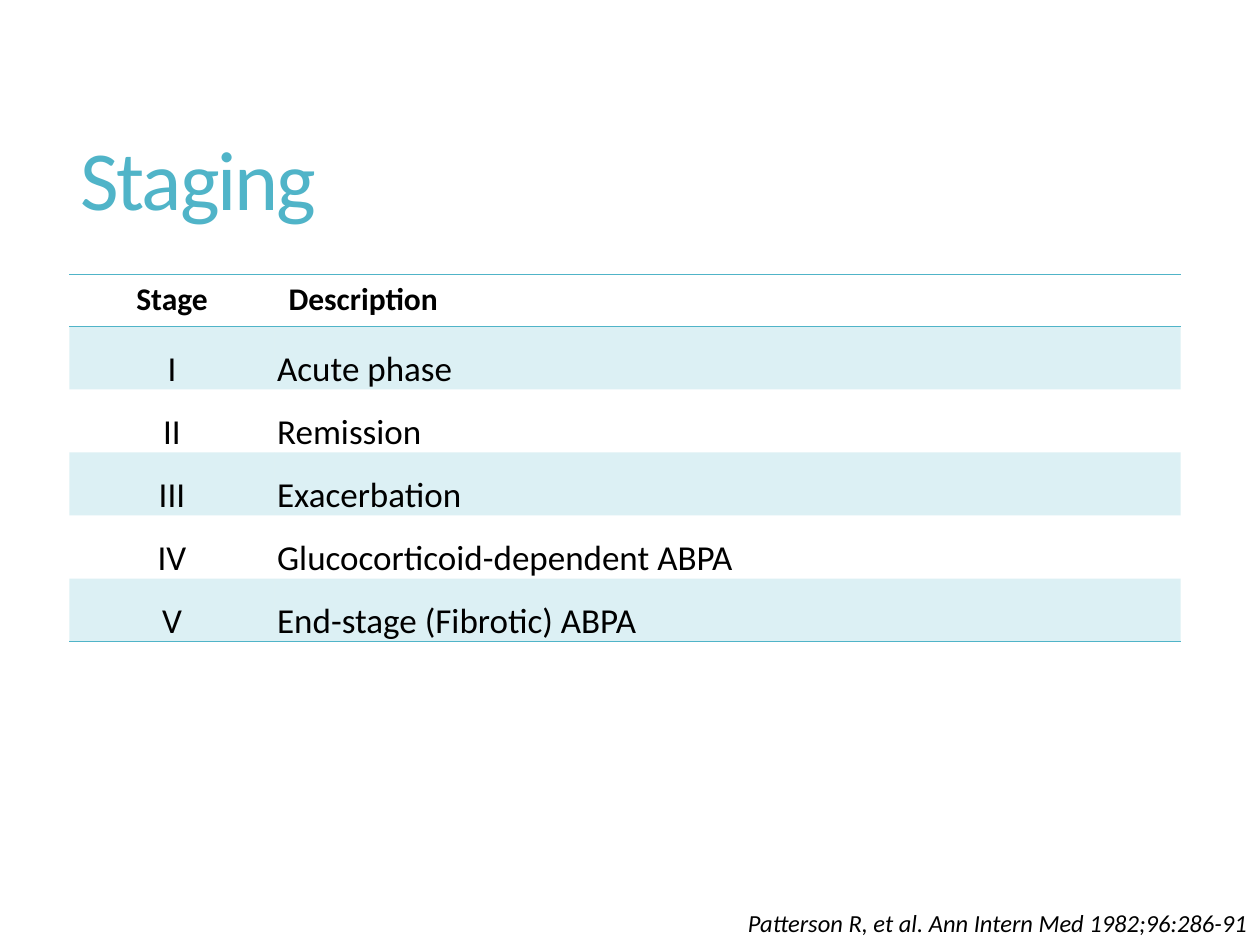
from pptx import Presentation
from pptx import util as u
from pptx.dml.color import RGBColor
from pptx.enum import text
from pptx.oxml import ns, xmlchemy

COLORS = {"accent": "50B4C8", "ink": "000000"}
FONT = "Calibri"
NO_GRID_STYLE = "{2D5ABB26-0587-4C30-8999-92F81FD0307C}"
LEFT, CENTER, RIGHT = text.PP_ALIGN.LEFT, text.PP_ALIGN.CENTER, text.PP_ALIGN.RIGHT
MIDDLE, TOP = text.MSO_ANCHOR.MIDDLE, text.MSO_ANCHOR.TOP
WIDTH, HEIGHT = 10, 7.5

STAGES = [
    ("Stage", "Description"),
    ("I", "Acute phase"),
    ("II", "Remission"),
    ("III", "Exacerbation"),
    ("IV", "Glucocorticoid-dependent ABPA"),
    ("V", "End-stage (Fibrotic) ABPA"),
]


def write(frame, words, size, color="ink", bold=False, italic=False,
          align=LEFT, line=1.0, tracking=None):
    para = frame.paragraphs[0]
    para.alignment = align
    para.line_spacing = line
    span = para.add_run()
    span.text = words
    font = span.font
    font.name, font.size = FONT, u.Pt(size)
    font.bold, font.italic = bold, italic
    font.color.rgb = RGBColor.from_string(COLORS[color])
    if tracking is not None:
        font._element.set("spc", str(round(tracking * 100)))


class Slide:
    def __init__(self, deck):
        self.page = deck.slides.add_slide(deck.slide_layouts[6])

    def place(self, left, top, width, height):
        return (u.Inches(left * WIDTH), u.Inches(top * HEIGHT),
                u.Inches(width * WIDTH), u.Inches(height * HEIGHT))

    def label(self, area, words, size, anchor=TOP, **style):
        box = self.page.shapes.add_textbox(*self.place(*area))
        frame = box.text_frame
        frame.word_wrap = True
        frame.vertical_anchor = anchor
        write(frame, words, size, **style)

    def border(self, cell, side):
        line = xmlchemy.OxmlElement(f"a:{side}")
        line.set("w", str(u.Pt(1)))
        fill = xmlchemy.OxmlElement("a:solidFill")
        color = xmlchemy.OxmlElement("a:srgbClr")
        color.set("val", COLORS["accent"])
        fill.append(color)
        line.append(fill)
        cell._tc.get_or_add_tcPr().append(line)

    def tint(self, cell, percent):
        cell.fill.solid()
        cell.fill.fore_color.rgb = RGBColor.from_string(COLORS["accent"])
        alpha = xmlchemy.OxmlElement("a:alpha")
        alpha.set("val", str(percent * 1000))
        cell._tc.tcPr.find(f"{ns.qn('a:solidFill')}/{ns.qn('a:srgbClr')}").append(alpha)

    def table(self, area, rows, first_column):
        holder = self.page.shapes.add_table(len(rows), len(rows[0]), *self.place(*area))
        table = holder.table
        table.first_row = table.horz_banding = False
        table._tbl.tblPr.find(ns.qn("a:tableStyleId")).text = NO_GRID_STYLE
        total = u.Inches(area[2] * WIDTH)
        table.columns[0].width = round(total * first_column)
        table.columns[1].width = total - table.columns[0].width
        for row, values in enumerate(rows):
            for column, words in enumerate(values):
                self.fill_cell(table.cell(row, column), words, row, column, len(rows) - 1)

    def fill_cell(self, cell, words, row, column, last):
        header = row == 0
        side, edge = (0.11, 0.05) if header else (0.02, 0)
        cell.margin_left = cell.margin_right = u.Inches(side)
        cell.margin_top = cell.margin_bottom = u.Inches(edge)
        cell.vertical_anchor = TOP if header else MIDDLE
        if header:
            self.border(cell, "lnT")
        if row in (0, last):
            self.border(cell, "lnB")
        if row % 2:
            self.tint(cell, 20)
        else:
            cell.fill.background()
        write(cell.text_frame, words, 18 if header else 20, bold=header,
              align=LEFT if column else CENTER, line=1.0 if header else 1.5)


def main():
    deck = Presentation()
    deck.slide_width, deck.slide_height = u.Inches(WIDTH), u.Inches(HEIGHT)
    slide = Slide(deck)
    slide.label((0.054, 0.55 / HEIGHT, 0.884, 1.81 / HEIGHT), "Staging", 48,
                anchor=MIDDLE, color="accent", line=0.9, tracking=-1.2)
    slide.table((0.055, 2.18 / HEIGHT, 0.882, 2.46 / HEIGHT), STAGES,
                first_column=1.63 / 8.82)
    slide.label((0.508, 7.16 / HEIGHT, 0.492, 0.34 / HEIGHT),
                "Patterson R, et al. Ann Intern Med 1982;96:286-91", 14,
                italic=True, align=RIGHT)
    deck.save("out.pptx")


if __name__ == "__main__":
    main()
